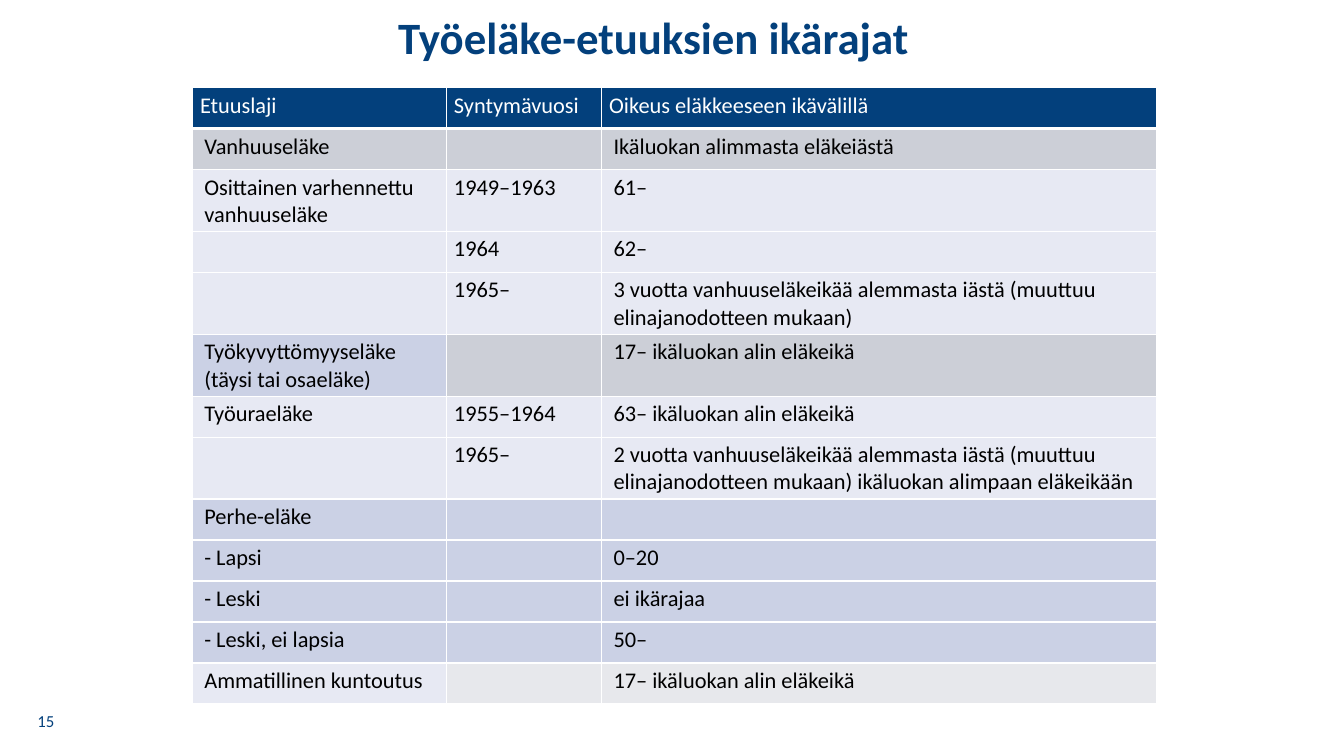
import pptx
import pptx.util
import pptx.oxml
import pptx.dml.color
import pptx.enum.text
from pptx.util import Pt

TITLE = "Työeläke-etuuksien ikärajat"
PAGE_NUMBER = "15"
HEADINGS = ("Etuuslaji", "Syntymävuosi", "Oikeus eläkkeeseen ikävälillä")
# Each row: benefit, birth years, age range, and the fill of each cell
GREY, PALE, BLUE = ("grey",) * 3, ("pale",) * 3, ("blue",) * 3
BENEFITS = [
    ("Vanhuuseläke", "", "Ikäluokan alimmasta eläkeiästä", GREY),
    ("Osittainen varhennettu vanhuuseläke", "1949–1963", "61–", PALE),
    ("", "1964", "62–", PALE),
    ("", "1965–", "3 vuotta vanhuuseläkeikää alemmasta iästä (muuttuu "
     "elinajanodotteen mukaan)", PALE),
    ("Työkyvyttömyyseläke\n(täysi tai osaeläke)", "", "17– ikäluokan alin eläkeikä",
     ("blue", "grey", "grey")),
    ("Työuraeläke", "1955–1964", "63– ikäluokan alin eläkeikä", PALE),
    ("", "1965–", "2 vuotta vanhuuseläkeikää alemmasta iästä (muuttuu "
     "elinajanodotteen mukaan) ikäluokan alimpaan eläkeikään", PALE),
    ("Perhe-eläke", "", "", BLUE),
    ("- Lapsi", "", "0–20", BLUE),
    ("- Leski", "", "ei ikärajaa", BLUE),
    ("- Leski, ei lapsia", "", "50–", BLUE),
    ("Ammatillinen kuntoutus", "", "17– ikäluokan alin eläkeikä",
     ("pale", "light", "light")),
]

THEME = {
    "font": "Calibri",
    "navy": "03407C", "white": "FFFFFF", "black": "000000",
    "grey": "CCCFD7", "pale": "E7E9F3", "blue": "CBD1E5", "light": "E7E8EC",
    "title_size": 32, "table_size": 16, "page_size": 12,
}
COLUMN_WIDTHS = (181.4, 110.9, 396.7)
ROW_HEIGHT = 29.3
TABLE_LEFT, TABLE_TOP = 137.5, 62.6
CENTER = pptx.enum.text.PP_ALIGN.CENTER
ANCHOR = pptx.enum.text.MSO_ANCHOR


def color(name):
    return pptx.dml.color.RGBColor.from_string(THEME[name])


def apply(target, **formats):
    for attribute, value in formats.items():
        setattr(target, attribute, value)


def write(frame, text, size, color_name, bold=False, **paragraph_formats):
    frame.text = text
    for paragraph in frame.paragraphs:
        apply(paragraph, **paragraph_formats)
        for run in paragraph.runs:
            apply(run.font, name=THEME["font"], size=Pt(THEME[size]), bold=bold)
            run.font.color.rgb = color(color_name)


def add_borders(cell, bottom_width):
    """Draw white lines on all four sides, ahead of the fill element."""
    properties = cell._tc.get_or_add_tcPr()
    widths = {"lnL": 1, "lnR": 1, "lnT": 1, "lnB": bottom_width}
    for position, (side, width) in enumerate(widths.items()):
        properties.insert(position, pptx.oxml.parse_xml(
            f'<a:{side} xmlns:a="http://schemas.openxmlformats.org/drawingml/2006/main"'
            f' w="{Pt(width)}"><a:solidFill><a:srgbClr val="{THEME["white"]}"/>'
            f'</a:solidFill></a:{side}>'))


def fill_cell(cell, text, fill, text_color, left_margin, bottom_width):
    apply(cell, margin_left=Pt(left_margin), margin_right=Pt(5.4),
          margin_top=Pt(2.9), margin_bottom=Pt(2.9))
    write(cell.text_frame, text, "table_size", text_color)
    cell.fill.solid()
    cell.fill.fore_color.rgb = color(fill)
    add_borders(cell, bottom_width)


def add_title(slide):
    title = slide.shapes.title
    apply(title, left=Pt(0), top=Pt(7.9), width=Pt(933.8), height=Pt(54.7))
    title.text_frame.vertical_anchor = ANCHOR.TOP
    write(title.text_frame, TITLE, "title_size", "navy", bold=True,
          alignment=CENTER, line_spacing=0.9)


def add_benefit_table(slide):
    rows = [(*HEADINGS, ("navy",) * 3)] + BENEFITS
    table = slide.shapes.add_table(
        len(rows), len(COLUMN_WIDTHS), Pt(TABLE_LEFT), Pt(TABLE_TOP),
        Pt(sum(COLUMN_WIDTHS)), Pt(ROW_HEIGHT * len(rows))).table
    for column, width in zip(table.columns, COLUMN_WIDTHS):
        column.width = Pt(width)
    for row_index, (*texts, fills) in enumerate(rows):
        table.rows[row_index].height = Pt(ROW_HEIGHT)
        header = row_index == 0
        for column_index, (text, fill) in enumerate(zip(texts, fills)):
            indented = not header and column_index != 1
            fill_cell(table.cell(row_index, column_index), text, fill,
                      "white" if header else "black",
                      8.5 if indented else 5.4, 3 if header else 1)


def add_page_number(slide):
    frame = slide.shapes.add_textbox(Pt(14.4), Pt(500.4), Pt(36.7), Pt(28.8)).text_frame
    apply(frame, word_wrap=True, vertical_anchor=ANCHOR.MIDDLE)
    write(frame, PAGE_NUMBER, "page_size", "navy", alignment=CENTER)


def main():
    deck = pptx.Presentation()
    apply(deck, slide_width=Pt(960), slide_height=Pt(540))
    slide = deck.slides.add_slide(deck.slide_layouts.get_by_name("Title Only"))
    add_title(slide)
    add_page_number(slide)
    add_benefit_table(slide)
    deck.save("out.pptx")


if __name__ == "__main__":
    main()
